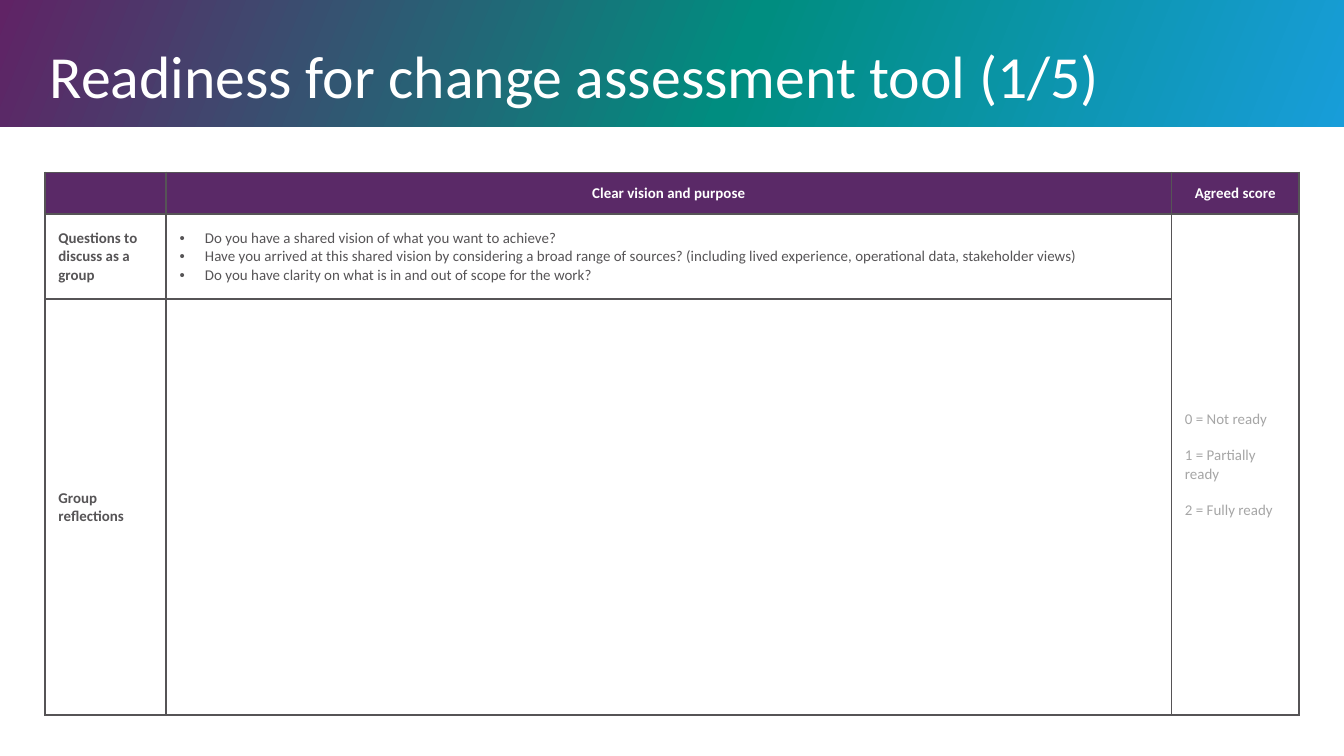
from dataclasses import dataclass

from lxml import etree
from pptx import Presentation
from pptx.dml.color import RGBColor
from pptx.enum.shapes import MSO_SHAPE
from pptx.enum.text import MSO_ANCHOR, PP_ALIGN
from pptx.oxml.ns import qn
from pptx.util import Cm, Pt

RECTANGLE = MSO_SHAPE.RECTANGLE
MIDDLE = MSO_ANCHOR.MIDDLE
LEFT, CENTER = PP_ALIGN.LEFT, PP_ALIGN.CENTER
BORDER_SIDES = ("a:lnL", "a:lnR", "a:lnT", "a:lnB")


@dataclass(frozen=True)
class Theme:
    font: str = "Calibri"
    title_size: float = 32
    body_size: float = 8
    border_width: float = 1
    score_gap: float = 9.75
    white: str = "FFFFFF"
    purple: str = "5A2967"
    grey: str = "565456"
    pale_grey: str = "A6A6A6"
    banner_stops: tuple = ((0, "602365"), (55, "008D80"), (100, "189DD9"))
    banner_angle: int = 22


@dataclass(frozen=True)
class CellStyle:
    color: str
    bold: bool = False
    align: PP_ALIGN = LEFT
    fill: str | None = None
    bulleted: bool = False
    gap: float = 0


@dataclass(frozen=True)
class CellContent:
    row: int
    column: int
    style: CellStyle
    lines: tuple[str, ...] = ()


THEME = Theme()
HEADER = CellStyle(THEME.white, bold=True, align=CENTER, fill=THEME.purple)
ROW_LABEL = CellStyle(THEME.grey, bold=True)
QUESTIONS = CellStyle(THEME.grey, bulleted=True)
SCORES = CellStyle(THEME.pale_grey, gap=THEME.score_gap)

COLUMN_WIDTHS = (2.29, 19, 2.41)
ROW_HEIGHTS = (0.79, 1.6, 7.87)
CONTENTS = (
    CellContent(0, 0, HEADER),
    CellContent(0, 1, HEADER, ("Clear vision and purpose",)),
    CellContent(0, 2, HEADER, ("Agreed score",)),
    CellContent(1, 0, ROW_LABEL, ("Questions to discuss as a group",)),
    CellContent(1, 1, QUESTIONS, (
        "Do you have a shared vision of what you want to achieve?",
        "Have you arrived at this shared vision by considering a broad range of sources? "
        "(including lived experience, operational data, stakeholder views)",
        "Do you have clarity on what is in and out of scope for the work?",
    )),
    CellContent(1, 2, SCORES, ("0 = Not ready", "1 = Partially ready", "2 = Fully ready")),
    CellContent(2, 0, ROW_LABEL, ("Group reflections",)),
    CellContent(2, 1, QUESTIONS),
    CellContent(2, 2, SCORES),
)


def apply_format(target, values: dict) -> None:
    for attribute, value in values.items():
        setattr(target, attribute, value)


def format_font(font, size: float, color: str, bold: bool = False) -> None:
    apply_format(font, {"name": THEME.font, "size": Pt(size), "bold": bold})
    font.color.rgb = RGBColor.from_string(color)


def add_solid_color(parent, color: str) -> None:
    etree.SubElement(parent, qn("a:srgbClr"), val=color)


def draw_banner(slide, width: int) -> None:
    banner = slide.shapes.add_shape(RECTANGLE, 0, 0, width, Cm(2.4))
    banner.shadow.inherit = False
    banner.line.fill.background()
    banner.fill.gradient()
    # python-pptx measures the angle counter-clockwise.
    banner.fill.gradient_angle = 360 - THEME.banner_angle
    stops = next(banner._element.spPr.iter(qn("a:gsLst")))
    for stop in list(stops):
        stops.remove(stop)
    for percent, color in THEME.banner_stops:
        stop = etree.SubElement(stops, qn("a:gs"), pos=str(percent * 1000))
        add_solid_color(stop, color)


def draw_title(slide, text: str) -> None:
    title = slide.shapes.add_textbox(Cm(0.94), Cm(0.89), Cm(23.57), Cm(1.04))
    frame = title.text_frame
    apply_format(frame, {
        "word_wrap": True, "vertical_anchor": MIDDLE,
        "margin_left": 0, "margin_right": 0, "margin_top": 0, "margin_bottom": 0,
    })
    run = frame.paragraphs[0].add_run()
    run.text = text
    format_font(run.font, THEME.title_size, THEME.white)


def add_borders(cell) -> None:
    properties = cell._tc.get_or_add_tcPr()
    for side in BORDER_SIDES:
        line = etree.SubElement(properties, qn(side), w=str(Pt(THEME.border_width)))
        add_solid_color(etree.SubElement(line, qn("a:solidFill")), THEME.grey)


def add_bullet(paragraph) -> None:
    properties = paragraph._p.get_or_add_pPr()
    apply_indent = {"marL": Cm(0.48), "indent": -Cm(0.48)}
    for name, value in apply_indent.items():
        properties.set(name, str(value))
    etree.SubElement(properties, qn("a:buFont"), typeface="Arial")
    etree.SubElement(properties, qn("a:buChar"), char="•")


def fill_cell(cell, content: CellContent) -> None:
    style = content.style
    add_borders(cell)
    cell.vertical_anchor = MIDDLE
    if style.fill:
        cell.fill.solid()
        cell.fill.fore_color.rgb = RGBColor.from_string(style.fill)
    else:
        cell.fill.background()

    frame = cell.text_frame
    if not content.lines:
        # Keeps an empty cell from stretching its row.
        end = frame.paragraphs[0]._p.get_or_add_endParaRPr()
        end.set("sz", str(int(THEME.body_size * 100)))
    for index, line in enumerate(content.lines):
        paragraph = frame.add_paragraph() if index else frame.paragraphs[0]
        paragraph.alignment = style.align
        if index and style.gap:
            paragraph.space_before = Pt(style.gap)
        if style.bulleted:
            add_bullet(paragraph)
        run = paragraph.add_run()
        run.text = line
        format_font(run.font, THEME.body_size, style.color, style.bold)


def draw_assessment_table(slide) -> None:
    frame = slide.shapes.add_table(
        len(ROW_HEIGHTS), len(COLUMN_WIDTHS), Cm(0.85), Cm(3.26),
        Cm(sum(COLUMN_WIDTHS)), Cm(sum(ROW_HEIGHTS)),
    )
    table = frame.table
    apply_format(table, {"first_row": False, "horz_banding": False})
    for column, width in zip(table.columns, COLUMN_WIDTHS):
        column.width = Cm(width)
    for row, height in zip(table.rows, ROW_HEIGHTS):
        row.height = Cm(height)
    table.cell(1, 2).merge(table.cell(2, 2))
    for content in CONTENTS:
        fill_cell(table.cell(content.row, content.column), content)


def main() -> None:
    presentation = Presentation()
    apply_format(presentation, {"slide_width": Cm(25.4), "slide_height": Cm(14.29)})
    slide = presentation.slides.add_slide(presentation.slide_layouts[6])
    draw_banner(slide, presentation.slide_width)
    draw_title(slide, "Readiness for change assessment tool (1/5)")
    draw_assessment_table(slide)
    presentation.save("out.pptx")


if __name__ == "__main__":
    main()
